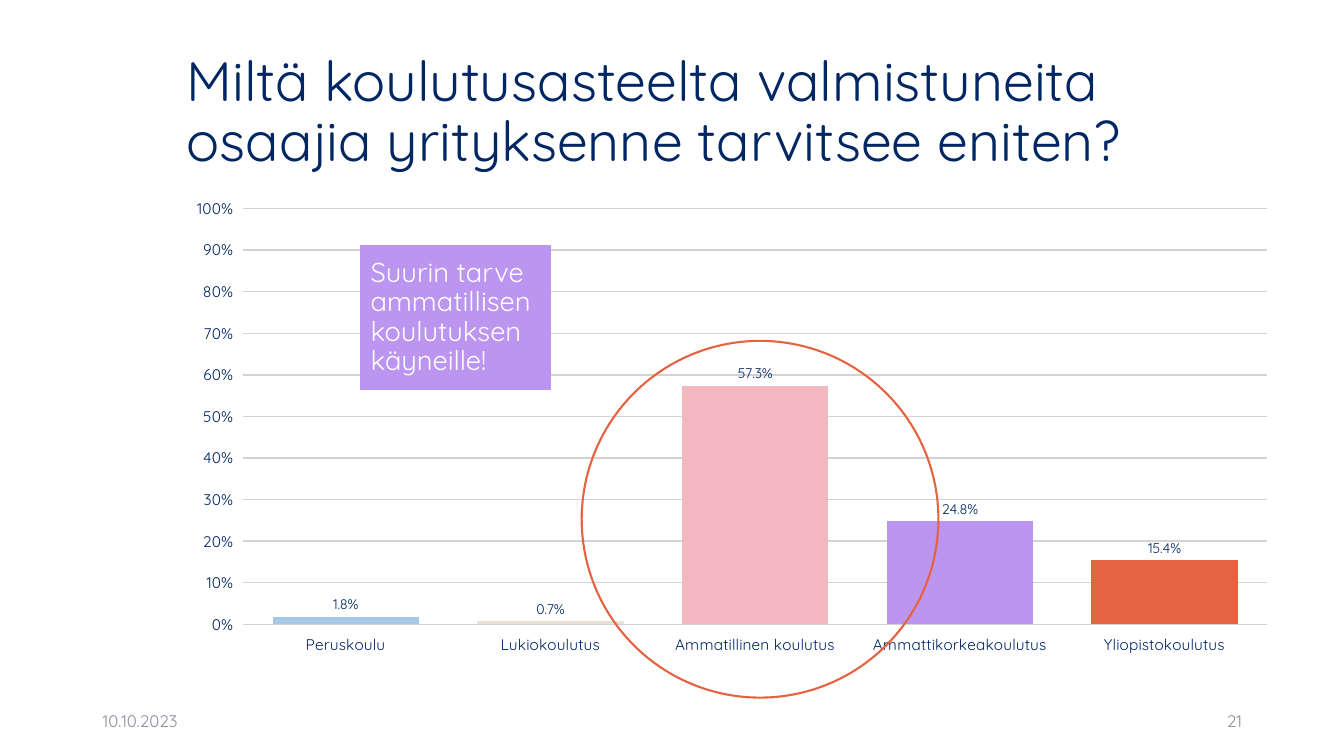
from dataclasses import dataclass

from lxml.etree import SubElement
from pptx import Presentation
from pptx.chart.data import CategoryChartData
from pptx.dml.color import RGBColor
from pptx.enum.chart import XL_CHART_TYPE, XL_LABEL_POSITION, XL_TICK_MARK
from pptx.enum.shapes import MSO_SHAPE
from pptx.enum.text import MSO_ANCHOR, PP_ALIGN
from pptx.oxml.ns import qn
from pptx.util import Cm, Pt


@dataclass(frozen=True)
class Theme:
    font: str = "Quicksand"
    navy: str = "002663"
    gray: str = "8C8E9F"
    grid: str = "D3D3D3"
    white: str = "FFFFFF"
    orange: str = "E66342"
    purple: str = "BB95EF"
    title_size: float = 39.6
    callout_size: float = 19.5
    footer_size: float = 12
    axis_size: float = 11
    label_size: float = 10


THEME = Theme()
TITLE = "Miltä koulutusasteelta valmistuneita osaajia yrityksenne tarvitsee eniten?"
CALLOUT = "Suurin tarve ammatillisen koulutuksen käyneille!"
EDUCATION_LEVELS = [
    ("Peruskoulu", 0.018, "A5C9E7"),
    ("Lukiokoulutus", 0.007, "E8E2D5"),
    ("Ammatillinen koulutus", 0.573, "F2B7BF"),
    ("Ammattikorkeakoulutus", 0.248, THEME.purple),
    ("Yliopistokoulutus", 0.154, THEME.orange),
]
FOOTERS = [
    ("10.10.2023", 2.34, PP_ALIGN.LEFT),
    ("21", 23.93, PP_ALIGN.RIGHT),
]
CHART_BOX = (4.45, 4.78, 28.04, 11.91)
PLOT_LAYOUT = {"x": 0.06, "y": 0.04, "w": 0.92, "h": 0.88}


def color(value):
    return RGBColor.from_string(value)


def paint(format_object, value):
    format_object.solid()
    format_object.fore_color.rgb = color(value)


def style_font(font, size, value):
    font.name = THEME.font
    font.size = Pt(size)
    font.color.rgb = color(value)


def write_text(shape, text, size, value, align=PP_ALIGN.LEFT, spacing=None):
    frame = shape.text_frame
    frame.word_wrap = True
    frame.vertical_anchor = MSO_ANCHOR.MIDDLE
    paragraph = frame.paragraphs[0]
    paragraph.alignment = align
    paragraph.line_spacing = spacing
    run = paragraph.add_run()
    run.text = text
    style_font(run.font, size, value)


def add_text(slide, box, *args, **options):
    shape = slide.shapes.add_textbox(*map(Cm, box))
    write_text(shape, *args, **options)


def add_plain_shape(slide, kind, box, line_color, line_width):
    shape = slide.shapes.add_shape(kind, *map(Cm, box))
    shape.shadow.inherit = False
    shape.line.color.rgb = color(line_color)
    shape.line.width = Pt(line_width)
    shape.fill.background()
    return shape


def set_plot_layout(chart):
    plot_area = chart.plots[0]._element.getparent()
    layout = plot_area.find(qn("c:layout"))
    if layout is None:
        layout = SubElement(plot_area, qn("c:layout"))
        plot_area.insert(0, layout)
    manual = SubElement(layout, qn("c:manualLayout"))
    settings = {"layoutTarget": "inner", "xMode": "edge", "yMode": "edge", **PLOT_LAYOUT}
    for name, value in settings.items():
        SubElement(manual, qn(f"c:{name}")).set("val", str(value))


def add_education_chart(slide):
    names, shares, fills = zip(*EDUCATION_LEVELS)
    data = CategoryChartData()
    data.categories = names
    data.add_series("Series 1", shares)
    chart = slide.shapes.add_chart(
        XL_CHART_TYPE.COLUMN_CLUSTERED, *map(Cm, CHART_BOX), data
    ).chart
    chart.has_legend = False
    chart.has_title = False
    style_font(chart.font, THEME.axis_size, THEME.navy)
    set_plot_layout(chart)

    for axis in (chart.category_axis, chart.value_axis):
        style_font(axis.tick_labels.font, THEME.axis_size, THEME.navy)
        axis.major_tick_mark = XL_TICK_MARK.OUTSIDE
        axis.format.line.fill.background()
    value_axis = chart.value_axis
    value_axis.minimum_scale = 0
    value_axis.maximum_scale = 1
    value_axis.major_unit = 0.1
    value_axis.tick_labels.number_format = "0%"
    value_axis.tick_labels.number_format_is_linked = False
    grid_line = value_axis.major_gridlines.format.line
    grid_line.color.rgb = color(THEME.grid)
    grid_line.width = Pt(1)

    plot = chart.plots[0]
    plot.gap_width = 40
    plot.overlap = -2
    plot.vary_by_categories = False
    plot.has_data_labels = True
    labels = plot.data_labels
    labels.show_value = True
    labels.number_format = "0.0%"
    labels.number_format_is_linked = False
    labels.position = XL_LABEL_POSITION.OUTSIDE_END
    style_font(labels.font, THEME.label_size, THEME.navy)
    for index, fill in enumerate(fills):
        paint(plot.series[0].points[index].format.fill, fill)


def main():
    presentation = Presentation()
    presentation.slide_width = Cm(33.87)
    presentation.slide_height = Cm(19.05)
    slide = presentation.slides.add_slide(presentation.slide_layouts[6])

    add_education_chart(slide)
    add_text(slide, (4.45, 1.02, 26.9, 3.68), TITLE, THEME.title_size, THEME.navy, spacing=0.9)
    for text, left, align in FOOTERS:
        add_text(slide, (left, 17.65, 7.62, 1.02), text, THEME.footer_size, THEME.gray, align)

    add_plain_shape(slide, MSO_SHAPE.OVAL, (14.66, 8.59, 8.99, 8.99), THEME.orange, 1.5)
    callout = add_plain_shape(
        slide, MSO_SHAPE.RECTANGLE, (9.09, 6.2, 4.78, 3.61), THEME.purple, 0.75
    )
    paint(callout.fill, THEME.purple)
    write_text(callout, CALLOUT, THEME.callout_size, THEME.white, spacing=0.9)

    presentation.save("out.pptx")


if __name__ == "__main__":
    main()
